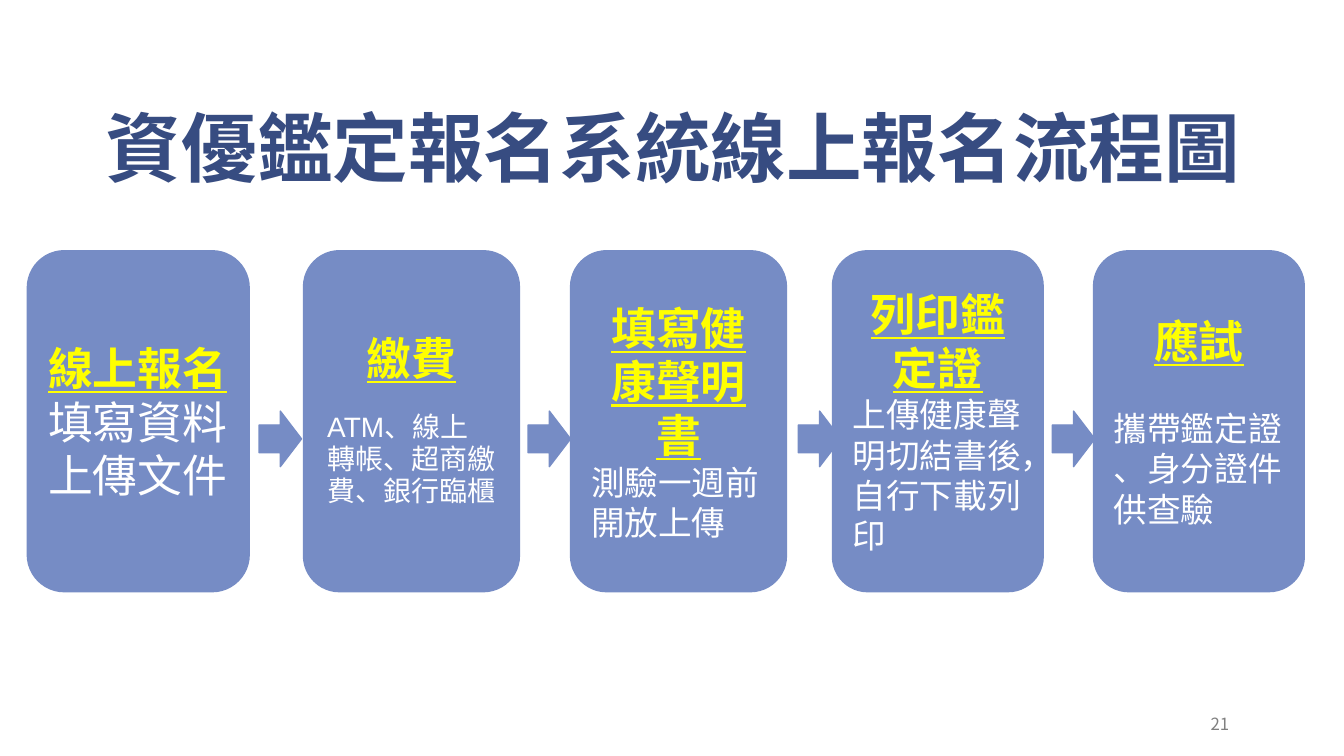
import pptx
import pptx.util
import pptx.dml.color
import pptx.enum.shapes
import pptx.enum.text

Cm = pptx.util.Cm
Pt = pptx.util.Pt
Shape = pptx.enum.shapes.MSO_SHAPE
Align = pptx.enum.text.PP_ALIGN
Anchor = pptx.enum.text.MSO_ANCHOR


class Theme:
    navy, blue, gray = "374C81", "768CC5", "808080"
    yellow, white = "FFFF00", "FFFFFF"
    sans, round, plain = "Noto Sans CJK TC", "Quicksand", "Arial"
    title, head, body, small, page = 54, 32, 24, 20, 12
    wide = (0.33, 0.18)
    tight = (0.25, 0.13)


def color(code):
    return pptx.dml.color.RGBColor.from_string(code)


class Deck:
    def __init__(self, theme):
        self.theme = theme
        self.show = pptx.Presentation()
        self.show.slide_width, self.show.slide_height = Cm(33.87), Cm(19.05)
        self.slide = self.show.slides.add_slide(self.show.slide_layouts[6])

    def frame(self, shape, anchor, inset):
        frame = shape.text_frame
        frame.word_wrap = True
        frame.vertical_anchor = anchor
        frame.margin_left = frame.margin_right = Cm(inset[0])
        frame.margin_top = frame.margin_bottom = Cm(inset[1])
        return frame

    def line(self, frame, text, size, ink, face, align=Align.LEFT,
             bold=False, under=False, space=None, gap=0):
        para = frame.paragraphs[0]
        if para.runs:
            para = frame.add_paragraph()
        para.text = text
        para.alignment = align
        if space:
            para.line_spacing = space
        if gap:
            para.space_before = Pt(gap)
        font = para.font
        font.size, font.name = Pt(size), face
        font.bold, font.underline = bold, under
        font.color.rgb = color(ink)

    def label(self, place, text, size, ink, **style):
        box = self.slide.shapes.add_textbox(*map(Cm, place))
        frame = self.frame(box, Anchor.BOTTOM, self.theme.wide)
        self.line(frame, text, size, ink, self.theme.sans, **style)

    def block(self, kind, place):
        shape = self.slide.shapes.add_shape(kind, *map(Cm, place))
        shape.shadow.inherit = False
        shape.fill.solid()
        shape.fill.fore_color.rgb = color(self.theme.blue)
        shape.line.color.rgb = color(self.theme.blue)
        shape.line.width = Pt(1)
        return shape

    def card(self, left, width, head, lines, size, face=Theme.plain,
             align=Align.CENTER, inset=Theme.tight, space=None, gap=0):
        theme = self.theme
        shape = self.block(Shape.ROUNDED_RECTANGLE, (left, 6.32, width, 8.59))
        frame = self.frame(shape, Anchor.MIDDLE, inset)
        self.line(frame, head, theme.head, theme.yellow, face, align,
                  bold=True, under=True, space=space)
        body = theme.plain if size == theme.small else theme.round
        for index, text in enumerate(lines):
            self.line(frame, text, size, theme.white, body, space=space,
                      gap=0 if index else gap)

    def arrow(self, left):
        self.block(Shape.RIGHT_ARROW, (left, 10.36, 1.07, 1.4))


def main():
    theme = Theme()
    deck = Deck(theme)

    # Title and page number
    deck.label((2.34, 1.85, 29.97, 3.18), "資優鑑定報名系統線上報名流程圖",
               theme.title, theme.navy, bold=True, space=0.85)
    deck.label((28.24, 17.78, 3.07, 0.89), "21", theme.page, theme.gray,
               align=Align.RIGHT)

    # Steps of the sign-up flow
    deck.card(0.69, 5.59, "線上報名", ["填寫資料", "上傳文件"], theme.head,
              face=theme.round, align=Align.LEFT)
    deck.card(7.65, 5.44, "繳費", ["ATM、線上轉帳、超商繳費、銀行臨櫃"],
              theme.small, inset=theme.wide, space=0.95, gap=18.7)
    deck.card(14.38, 5.44, "填寫健康聲明書", ["測驗一週前", "開放上傳"],
              theme.body)
    deck.card(20.98, 5.31, "列印鑑定證",
              ["上傳健康聲明切結書後，自行下載列印"], theme.body)
    deck.card(27.56, 5.31, "應試", ["攜帶鑑定證", "、身分證件供查驗"],
              theme.body, gap=29)

    # Arrows between the steps
    for left in (6.53, 13.31, 20.12, 26.52):
        deck.arrow(left)

    deck.show.save("out.pptx")


if __name__ == "__main__":
    main()
